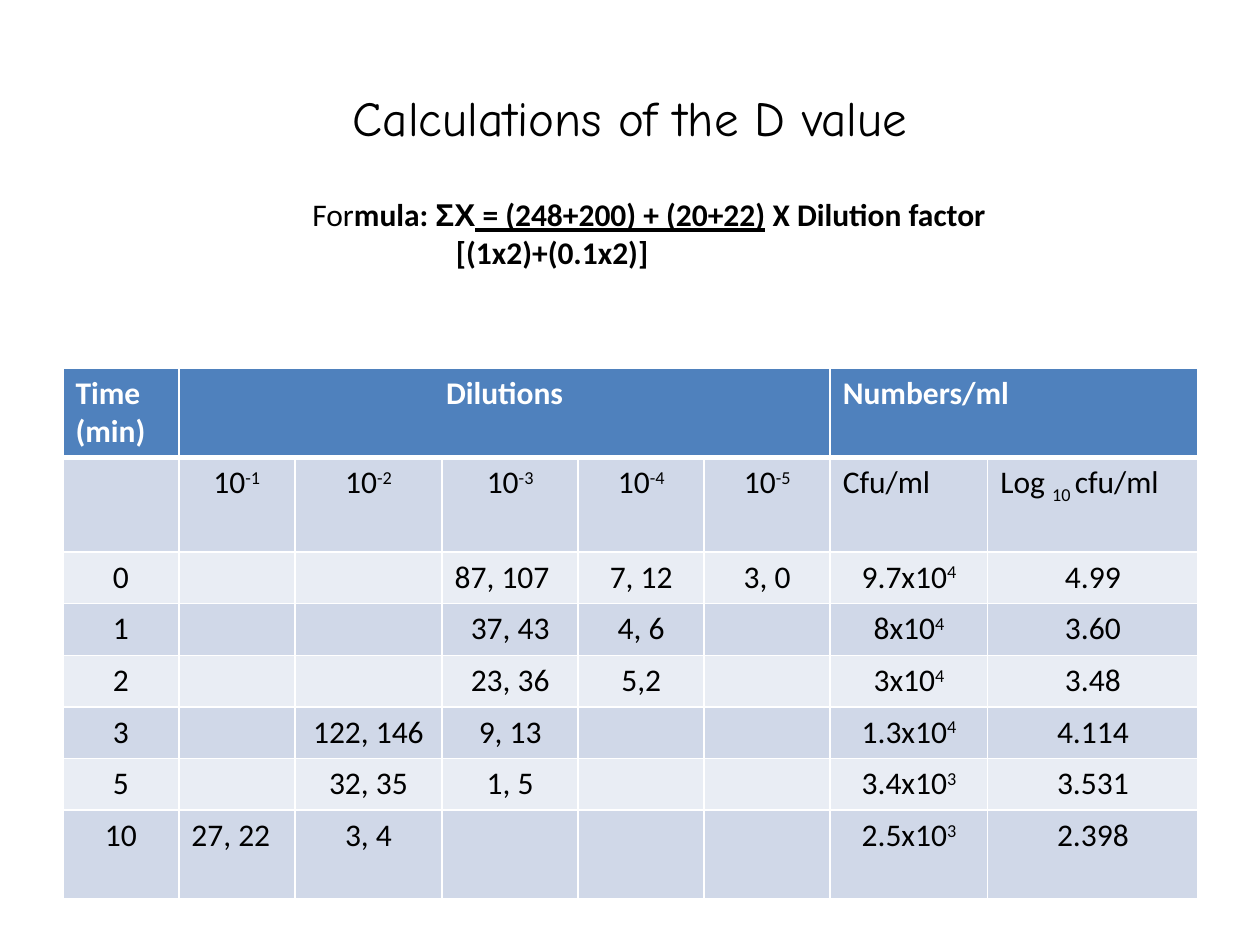
"""Build the slide on calculating the D value from plate counts."""
import pptx
import pptx.dml.color
import pptx.enum.text
import pptx.oxml
import pptx.oxml.ns
import pptx.util
from pptx.util import Inches

RGBColor = pptx.dml.color.RGBColor
ALIGN = pptx.enum.text.PP_ALIGN
ANCHOR = pptx.enum.text.MSO_ANCHOR
BLACK = RGBColor(0x00, 0x00, 0x00)
WHITE = RGBColor(0xFF, 0xFF, 0xFF)
HEADER_BLUE = RGBColor(0x4F, 0x81, 0xBD)
BANDS = (RGBColor(0xE9, 0xED, 0xF4), RGBColor(0xD0, 0xD8, 0xE8))

COLUMN_WIDTHS = (0.92, 0.92, 1.17, 1.08, 1, 1, 1.25, 1.67)
ROW_HEIGHTS = (0.7, 0.75, 0.41, 0.41, 0.41, 0.41, 0.41, 0.7)
COUNTS = (
    ("Time (min)", "Dilutions", "", "", "", "", "Numbers/ml", ""),
    ("", "10^-1", "10^-2", "10^-3", "10^-4", "10^-5", "Cfu/ml", "Log _10 _cfu/ml"),
    ("0", "", "", "87, 107", "7, 12", "3, 0", "9.7x10^4", "4.99"),
    ("1", "", "", "37, 43", "4, 6", "", "8x10^4", "3.60"),
    ("2", "", "", "23, 36", "5,2", "", "3x10^4", "3.48"),
    ("3", "", "122, 146", "9, 13", "", "", "1.3x10^4", "4.114"),
    ("5", "", "32, 35", "1, 5", "", "", "3.4x10^3", "3.531"),
    ("10", "27, 22", "3, 4", "", "", "", "2.5x10^3", "2.398"),
)
LEFT_ALIGNED = {(0, 0), (0, 6), (1, 6), (1, 7), (2, 3), (7, 1)}
HEADER_SPANS = ((1, 5), (6, 7))


class SlideBuilder:
    """Holds the text style and the current slide."""

    def __init__(self, slide, font="Calibri", size=18):
        self.slide = slide
        self.font = font
        self.size = size

    def style(self, paragraph, color=BLACK, bold=None, font=None, size=None):
        paragraph.font.name = font or self.font
        paragraph.font.size = pptx.util.Pt(size or self.size)
        paragraph.font.bold = bold
        paragraph.font.color.rgb = color

    def title(self, text, left, top, width, height):
        title = self.slide.shapes.title
        title.left, title.top = Inches(left), Inches(top)
        title.width, title.height = Inches(width), Inches(height)
        title.text_frame.vertical_anchor = ANCHOR.MIDDLE
        heading = title.text_frame.paragraphs[0]
        heading.text = text
        heading.alignment = ALIGN.CENTER
        self.style(heading, font="Comic Neue", size=28)

    def formula(self, lines, left, top, width, height):
        frame = self.slide.shapes.add_textbox(
            Inches(left), Inches(top), Inches(width), Inches(height)).text_frame
        frame.word_wrap = True
        for number, (indent, parts) in enumerate(lines):
            line = frame.add_paragraph() if number else frame.paragraphs[0]
            line._p.get_or_add_pPr().set("marL", str(Inches(indent)))
            self.style(line)
            for text, font, bold, underline in parts:
                run = line.add_run()
                run.text = text
                run.font.name = font
                run.font.bold = bold
                run.font.underline = underline

    def scripted_text(self, paragraph, text):
        mark, baseline = ("_", "-25000") if "_" in text else ("^", "30000")
        for position, part in enumerate(text.split(mark)):
            run = paragraph.add_run()
            run.text = part
            if position % 2:
                run._r.get_or_add_rPr().set("baseline", baseline)

    def borders(self, cell, bottom):
        properties = cell._tc.get_or_add_tcPr()
        for side, width in (("L", 1), ("R", 1), ("T", 1), ("B", bottom)):
            properties.append(pptx.oxml.parse_xml(
                f'<a:ln{side} {pptx.oxml.ns.nsdecls("a")} w="{pptx.util.Pt(width)}">'
                f'<a:solidFill><a:srgbClr val="{WHITE}"/></a:solidFill></a:ln{side}>'))

    def table(self, rows, left, top):
        table = self.slide.shapes.add_table(
            len(rows), len(COLUMN_WIDTHS), Inches(left), Inches(top),
            Inches(sum(COLUMN_WIDTHS)), Inches(sum(ROW_HEIGHTS))).table
        for column, width in zip(table.columns, COLUMN_WIDTHS):
            column.width = Inches(width)
        for row, height in zip(table.rows, ROW_HEIGHTS):
            row.height = Inches(height)
        for r, row in enumerate(rows):
            header = r == 0
            for c, text in enumerate(row):
                cell = table.cell(r, c)
                self.borders(cell, 3 if header else 1)
                cell.fill.solid()
                cell.fill.fore_color.rgb = HEADER_BLUE if header else BANDS[r % 2]
                entry = cell.text_frame.paragraphs[0]
                entry.alignment = ALIGN.LEFT if (r, c) in LEFT_ALIGNED else ALIGN.CENTER
                self.style(entry, WHITE if header else BLACK, header)
                if text:
                    self.scripted_text(entry, text)
        for first, last in HEADER_SPANS:
            table.cell(0, first).merge(table.cell(0, last))


def main():
    deck = pptx.Presentation()
    deck.slide_width, deck.slide_height = Inches(10), Inches(7.5)
    builder = SlideBuilder(deck.slides.add_slide(deck.slide_layouts[5]))
    builder.title("Calculations of the D value", 0.5, 0.3, 9, 1.25)
    builder.table(COUNTS, 0.5, 2.92)
    numerator = (
        ("For", "Calibri", False, False),
        ("mula: ", "Calibri", True, False),
        ("ΣΧ", "Arial", True, False),
        (" = (248+200) + (20+22)", "Calibri", True, True),
        (" X Dilution factor", "Calibri", True, False),
    )
    denominator = (("[(1x2)+(0.1x2)]", "Calibri", True, False),)
    builder.formula(((0.05, numerator), (1.19, denominator)), 2.33, 1.5, 6.42, 0.71)
    deck.save("out.pptx")


if __name__ == "__main__":
    main()
